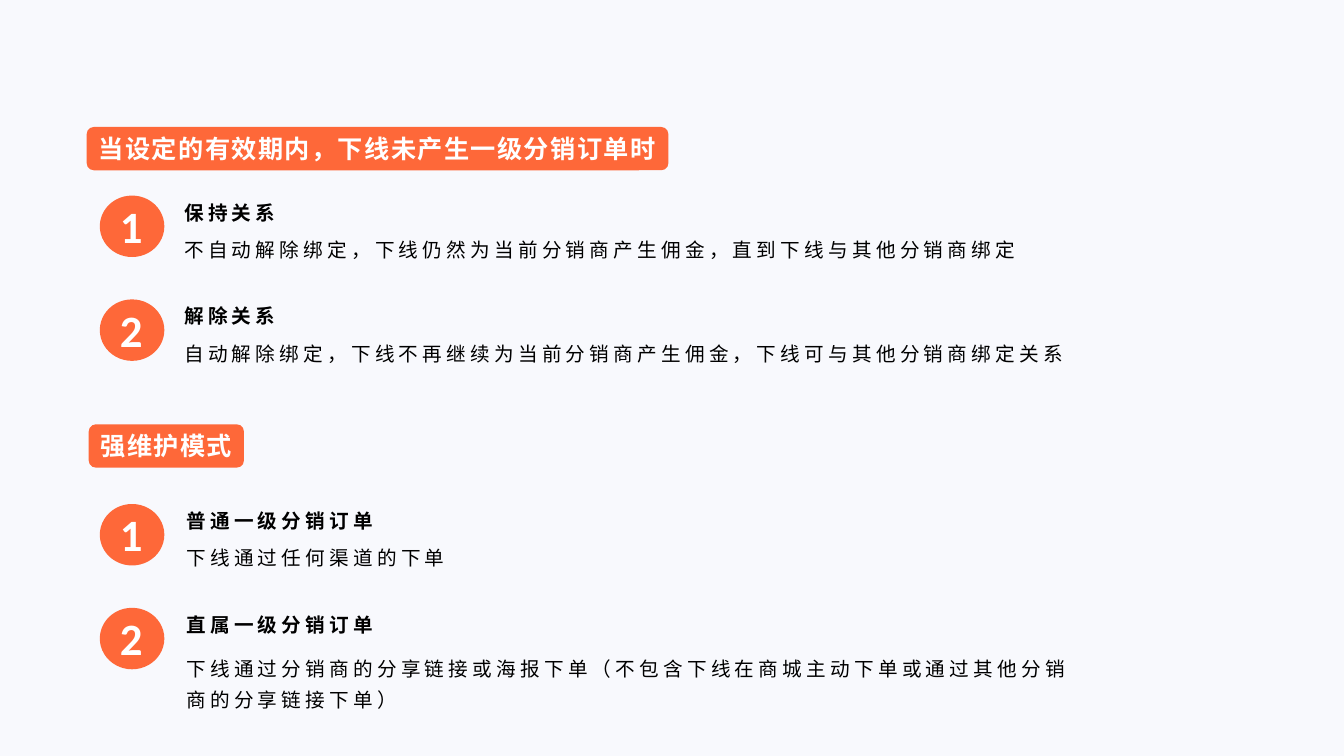
from pptx import Presentation
from pptx.dml.color import RGBColor
from pptx.enum.shapes import MSO_SHAPE
from pptx.enum.text import MSO_ANCHOR, MSO_AUTO_SIZE, PP_ALIGN
from pptx.util import Inches, Pt

ROUND = MSO_SHAPE.ROUNDED_RECTANGLE
OVAL = MSO_SHAPE.OVAL
TOP = MSO_ANCHOR.TOP
GROW = MSO_AUTO_SIZE.SHAPE_TO_FIT_TEXT
LEFT = PP_ALIGN.LEFT

COLORS = {"back": "F8F9FD", "accent": "FE6839", "light": "FFFFFF", "dark": "000000"}
FONT = "Calibri"
STEP = 1.03

GROUPS = [
    {
        "head": "当设定的有效期内，下线未产生一级分销订单时",
        "badge": (0.86, 1.26, 5.77, 0.43),
        "left": 1.73,
        "top": 1.94,
        "items": [
            ("保持关系", 1.14,
             ["不自动解除绑定，下线仍然为当前分销商产生佣金，直到下线与其他分销商绑定"], 8.46),
            ("解除关系", 1.14,
             ["自动解除绑定，下线不再继续为当前分销商产生佣金，下线可与其他分销商绑定关系"], 8.94),
        ],
    },
    {
        "head": "强维护模式",
        "badge": (0.88, 4.21, 1.54, 0.43),
        "left": 1.75,
        "top": 5.0,
        "items": [
            ("普通一级分销订单", 2.09, ["下线通过任何渠道的下单"], 2.8),
            ("直属一级分销订单", 2.09,
             ["下线通过分销商的分享链接或海报下单（不包含下线在商城主动下单或通过其他分销",
              "商的分享链接下单）"], 8.94),
        ],
    },
]


class Deck:
    def __init__(self, slide):
        self.slide = slide
        self.shapes = slide.shapes
        fill = slide.background.fill
        fill.solid()
        fill.fore_color.rgb = self.color("back")

    def color(self, name):
        return RGBColor.from_string(COLORS[name])

    def shape(self, kind, box):
        shape = self.shapes.add_shape(kind, *map(Inches, box))
        shape.shadow.inherit = False
        shape.fill.solid()
        shape.fill.fore_color.rgb = self.color("accent")
        shape.line.fill.background()

    def text(self, box, lines, size, color="dark", bold=False, gap=0, lead=1.0, holder=None):
        if holder is None:
            holder = self.shapes.add_textbox(*map(Inches, box))
        else:
            holder.left, holder.top, holder.width, holder.height = map(Inches, box)
            self.shapes._spTree.append(holder._element)
        frame = holder.text_frame
        frame.word_wrap = False
        frame.auto_size = GROW
        frame.vertical_anchor = TOP
        for index, line in enumerate(lines):
            para = frame.add_paragraph() if index else frame.paragraphs[0]
            para.alignment = LEFT
            para.line_spacing = lead
            run = para.add_run()
            run.text = line
            font = run.font
            font.name = FONT
            font.size = Pt(size)
            font.bold = bold
            font.color.rgb = self.color(color)
            if gap:
                font._element.set("spc", str(gap * 100))

    def badge(self, box, label, holder=None):
        left, top, width, height = box
        self.shape(ROUND, box)
        self.text((left + 0.02, top + 0.01, width - 0.03, height - 0.03),
                  [label], 18, "light", True, 1, holder=holder)

    def item(self, number, left, top, label, span, lines, width):
        self.shape(OVAL, (0.99, top, 0.64, 0.61))
        self.text((1.09, top - 0.02, 0.42, 0.64), [str(number)], 32, "light", True)
        self.text((left, top, span, 0.34), [label], 14, bold=True, gap=3)
        many = len(lines) > 1
        self.text((left, top + 0.37, width, 0.71 if many else 0.34),
                  lines, 14, gap=3, lead=1.3 if many else 1.0)


def main():
    deck = Presentation()
    deck.slide_width = Inches(13.33)
    deck.slide_height = Inches(7.5)
    page = Deck(deck.slides.add_slide(deck.slide_layouts[5]))
    holder = page.shapes.title
    for group in GROUPS:
        page.badge(group["badge"], group["head"], holder)
        holder = None
        for index, item in enumerate(group["items"]):
            page.item(index + 1, group["left"], group["top"] + index * STEP, *item)
    deck.save("out.pptx")


if __name__ == "__main__":
    main()
